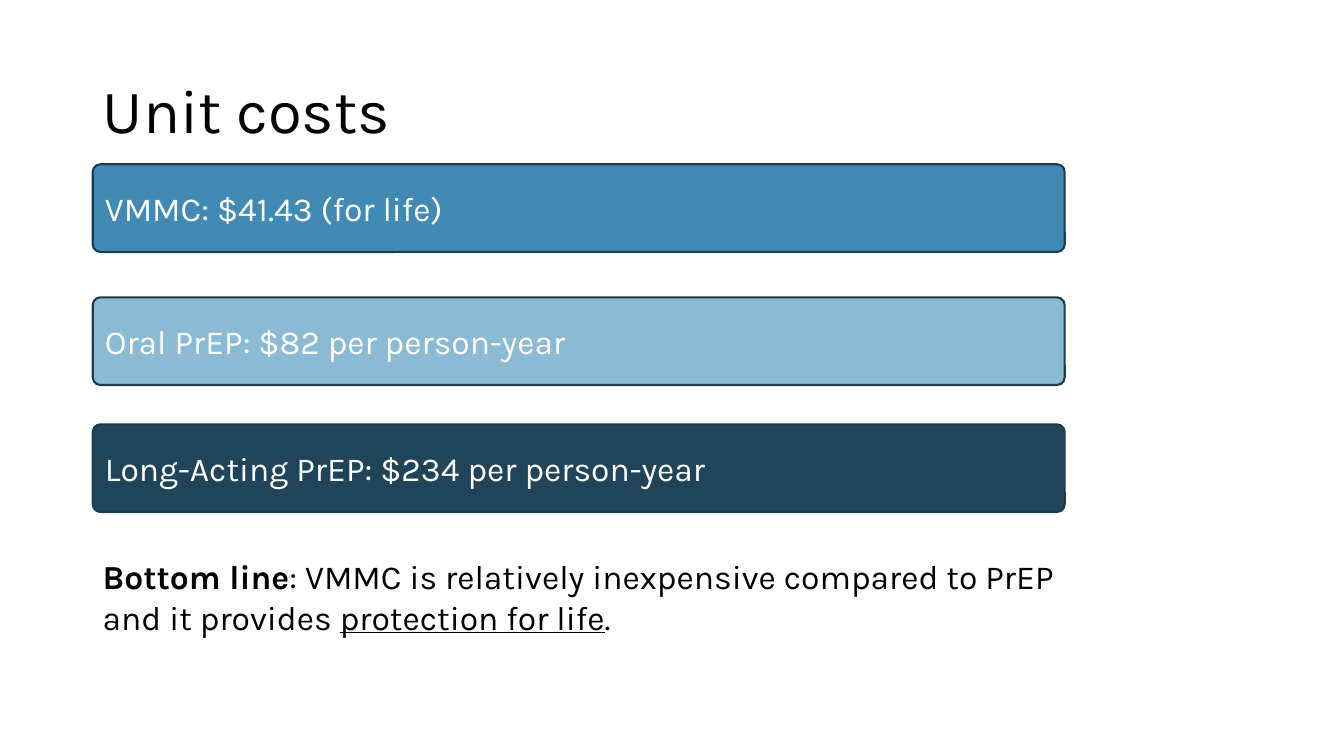
from pptx import Presentation
from pptx.dml.color import RGBColor
from pptx.enum.shapes import MSO_SHAPE
from pptx.enum.text import MSO_ANCHOR, PP_ALIGN
from pptx.util import Inches, Pt


def color(value):
    return RGBColor.from_string(value)


class CostSlide:
    font = "Karla"
    ink = "000000"
    outline = "1C3C4E"
    left = 0.92
    width = 9.64
    body_size = 24

    def __init__(self, presentation):
        self.slide = presentation.slides.add_slide(presentation.slide_layouts[5])

    def style(self, run, size, hex_color):
        run.font.name = self.font
        run.font.size = Pt(size)
        run.font.color.rgb = color(hex_color)

    def title(self, text):
        heading = self.slide.shapes.title
        heading.left, heading.top = Inches(self.left), Inches(0.4)
        heading.width, heading.height = Inches(11.5), Inches(1.45)
        frame = heading.text_frame
        frame.text = text
        frame.vertical_anchor = MSO_ANCHOR.MIDDLE
        paragraph = frame.paragraphs[0]
        paragraph.alignment = PP_ALIGN.LEFT
        paragraph.line_spacing = 0.9
        self.style(paragraph.runs[0], 44, self.ink)

    def bar(self, text, top, fill):
        bar = self.slide.shapes.add_shape(
            MSO_SHAPE.ROUNDED_RECTANGLE,
            Inches(self.left), Inches(top), Inches(self.width), Inches(0.87))
        bar.adjustments[0] = 0.088
        bar.shadow.inherit = False
        bar.fill.solid()
        bar.fill.fore_color.rgb = color(fill)
        bar.line.color.rgb = color(self.outline)
        bar.line.width = Pt(1.5)
        frame = bar.text_frame
        frame.text = text
        frame.word_wrap = True
        frame.vertical_anchor = MSO_ANCHOR.MIDDLE
        paragraph = frame.paragraphs[0]
        paragraph.alignment = PP_ALIGN.LEFT
        self.style(paragraph.runs[0], self.body_size, "FFFFFF")

    def conclusion(self, parts, top):
        conclusion = self.slide.shapes.add_textbox(
            Inches(self.left), Inches(top), Inches(self.width), Inches(0.91))
        frame = conclusion.text_frame
        frame.word_wrap = True
        for text, bold, underline in parts:
            run = frame.paragraphs[0].add_run()
            run.text = text
            self.style(run, self.body_size, self.ink)
            run.font.bold = bold
            run.font.underline = underline


def main():
    presentation = Presentation()
    presentation.slide_width = Inches(13.33)
    presentation.slide_height = Inches(7.5)

    unit_costs = CostSlide(presentation)
    unit_costs.title("Unit costs")
    for text, top, fill in [
        ("VMMC: $41.43 (for life)", 1.63, "418AB3"),
        ("Oral PrEP: $82 per person-year", 2.95, "8ABAD4"),
        ("Long-Acting PrEP: $234 per person-year", 4.21, "20455A"),
    ]:
        unit_costs.bar(text, top, fill)
    unit_costs.conclusion([
        ("Bottom line", True, False),
        (": VMMC is relatively inexpensive compared to PrEP and it provides ", False, False),
        ("protection for life", False, True),
        (".", False, False),
    ], top=5.47)

    presentation.save("out.pptx")


if __name__ == "__main__":
    main()
